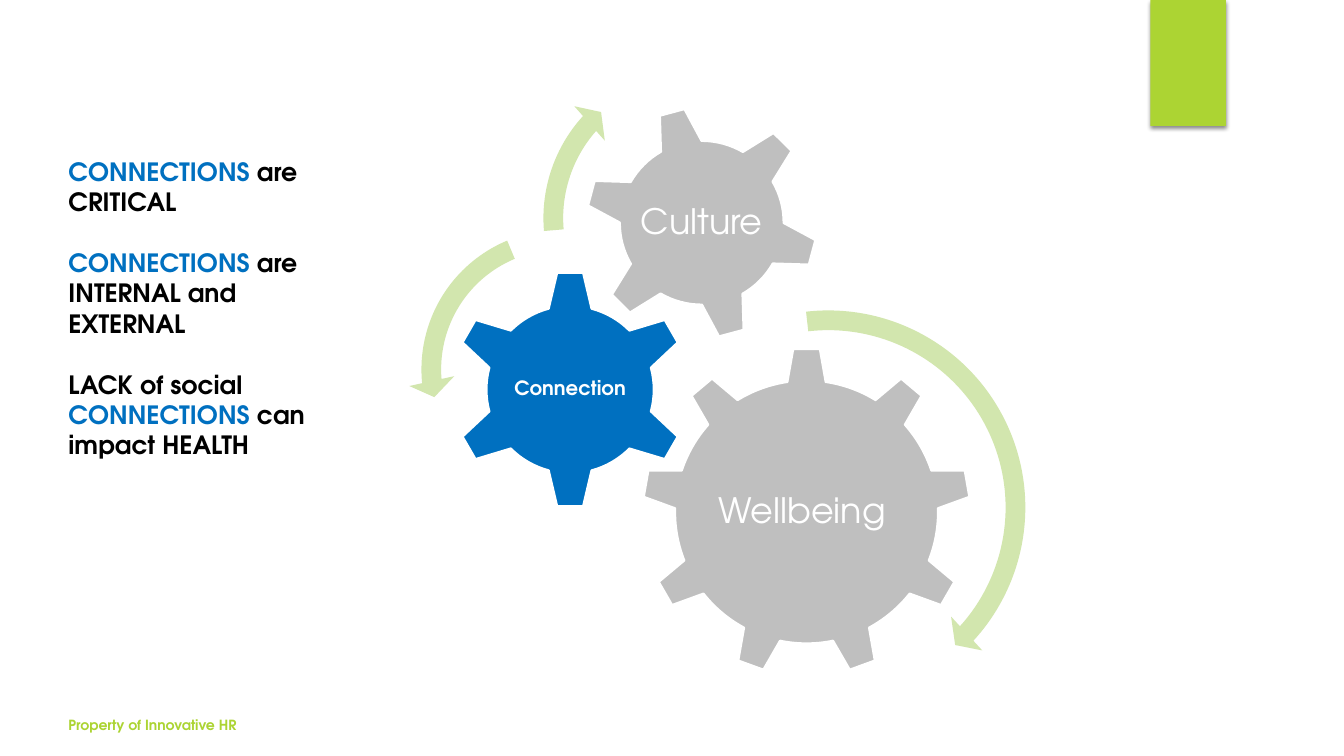
import pptx
import pptx.util
import pptx.dml.color
import pptx.enum.shapes
import pptx.enum.text
import pptx.oxml
import pptx.oxml.ns

Inches = pptx.util.Inches
Pt = pptx.util.Pt
SHAPE = pptx.enum.shapes.MSO_SHAPE
ANCHOR = pptx.enum.text.MSO_ANCHOR

FONT = "TeX Gyre Adventor"
COLORS = {
    "lime": "ACD433",
    "pale": "D2E6AE",
    "gray": "BFBFBF",
    "blue": "0070C0",
    "white": "FFFFFF",
    "black": "000000",
}

# label, gear shape, box, rotation, fill, label width, label size, bold
GEARS = [
    ("Wellbeing ", SHAPE.GEAR_9, (6.37, 3.45, 3.26), 0, "gray", 1.95, 25, False),
    ("Connection", SHAPE.GEAR_6, (4.47, 2.68, 2.37), 0, "blue", 1.18, 14, True),
    ("Culture", SHAPE.GEAR_6, (5.8, 1.05, 2.32), 345, "gray", 1.3, 25, False),
]

# arrow shape, box, band %, head angle, end angle, start angle, head %
ARROWS = [
    (SHAPE.CIRCULAR_ARROW, (6.13, 2.95, 4.17), 4.69, 4.98, 42.32, 263.54, 5.47),
    (SHAPE.LEFT_CIRCULAR_ARROW, (4.05, 2.15, 3.03), 6.45, 7.17, 174.82, 247.3, 7.53),
    (SHAPE.CIRCULAR_ARROW, (5.26, 0.53, 3.27), 5.98, 6.57, 221.9, 175.14, 6.98),
]

MESSAGES = [
    [("CONNECTIONS", "blue"), (" are CRITICAL", "black")],
    [("CONNECTIONS", "blue"), (" are INTERNAL and EXTERNAL", "black")],
    [("LACK of social ", "black"), ("CONNECTIONS", "blue"),
     (" can impact HEALTH", "black")],
]


def rgb(name):
    return pptx.dml.color.RGBColor.from_string(COLORS[name])


def set_font(font, size, bold, color=None):
    font.name = FONT
    font.size = Pt(size)
    font.bold = bold
    if color:
        font.color.rgb = rgb(color)


def add_filled(slide, kind, left, top, width, height, fill):
    shape = slide.shapes.add_shape(
        kind, Inches(left), Inches(top), Inches(width), Inches(height))
    shape.shadow.inherit = False
    shape.fill.solid()
    shape.fill.fore_color.rgb = rgb(fill)
    shape.line.fill.background()
    return shape


def add_text_frame(slide, left, top, width, height, anchor):
    box = slide.shapes.add_textbox(
        Inches(left), Inches(top), Inches(width), Inches(height))
    frame = box.text_frame
    frame.word_wrap = True
    frame.vertical_anchor = anchor
    return frame


def add_corner_tab(slide, left, top, width, height):
    tab = add_filled(slide, SHAPE.RECTANGLE, left, top, width, height, "lime")
    effects = tab.element.spPr.find(pptx.oxml.ns.qn("a:effectLst"))
    effects.append(pptx.oxml.parse_xml(
        f'<a:outerShdw {pptx.oxml.ns.nsdecls("a")} blurRad="{Pt(3)}" '
        f'dist="{Pt(2)}" dir="5400000" rotWithShape="0">'
        f'<a:srgbClr val="{COLORS["black"]}"><a:alpha val="45000"/></a:srgbClr>'
        '</a:outerShdw>'))


def add_gear(slide, label, kind, box, rotation, fill, label_width, size, bold):
    """Draw a gear with an upright label at its centre."""
    left, top, side = box
    gear = add_filled(slide, kind, left, top, side, side, fill)
    gear.rotation = rotation
    gear.line.color.rgb = rgb("white")
    gear.line.width = Pt(1.5)

    inset = (side - label_width) / 2
    frame = add_text_frame(slide, left + inset, top + inset,
                           label_width, label_width, ANCHOR.MIDDLE)
    frame.margin_left = frame.margin_right = Inches(0.02)
    frame.margin_top = frame.margin_bottom = Inches(0.02)
    paragraph = frame.paragraphs[0]
    paragraph.text = label
    paragraph.alignment = pptx.enum.text.PP_ALIGN.CENTER
    paragraph.line_spacing = 0.9
    set_font(paragraph.font, size, bold, "white")


def add_turn_arrow(slide, kind, box, band, head_angle, end, start, head):
    """Draw a curved arrow; angles in degrees, band and head in percent."""
    left, top, side = box
    arrow = add_filled(slide, kind, left, top, side, side, "pale")
    arrow.adjustments[0] = band / 100
    for index, angle in enumerate((head_angle, end, start), start=1):
        arrow.adjustments[index] = angle * 0.6
    arrow.adjustments[4] = head / 100


def add_messages(slide, left, top, width, height):
    frame = add_text_frame(slide, left, top, width, height, ANCHOR.TOP)
    for index, pieces in enumerate(MESSAGES):
        paragraph = frame.add_paragraph() if index else frame.paragraphs[0]
        if index:
            paragraph.space_before = Pt(22)
        set_font(paragraph.font, 18, True)
        for words, color in pieces:
            run = paragraph.add_run()
            run.text = words
            run.font.color.rgb = rgb(color)


def add_footer(slide, left, top, width, height):
    frame = add_text_frame(slide, left, top, width, height, ANCHOR.BOTTOM)
    paragraph = frame.paragraphs[0]
    paragraph.text = "Property of Innovative HR"
    set_font(paragraph.font, 10, True, "lime")


def main():
    deck = pptx.Presentation()
    deck.slide_width = Inches(13.33)
    deck.slide_height = Inches(7.5)
    slide = deck.slides.add_slide(deck.slide_layouts[6])

    add_corner_tab(slide, 11.41, 0, 0.75, 1.25)
    for gear in GEARS:
        add_gear(slide, *gear)
    for arrow in ARROWS:
        add_turn_arrow(slide, *arrow)
    add_messages(slide, 0.58, 1.5, 3.04, 3.74)
    add_footer(slide, 0.58, 6.99, 4.22, 0.33)

    deck.save("out.pptx")


if __name__ == "__main__":
    main()
